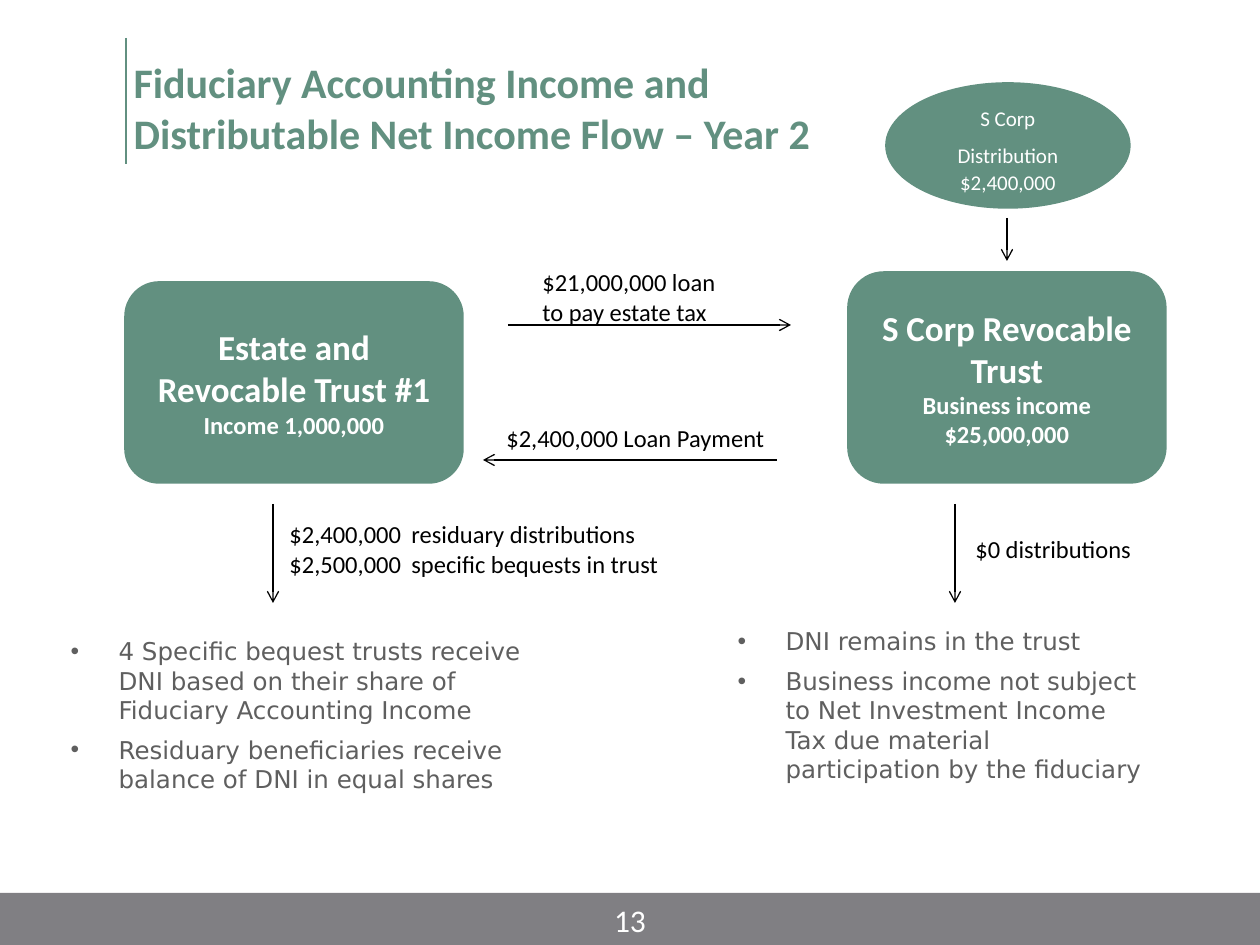
from lxml import etree
from pptx import Presentation
from pptx import util as u
from pptx.dml.color import RGBColor
from pptx.enum import shapes, text
from pptx.oxml import ns

PX = 914400 // 126
GREEN, GRAY, TEXT_GRAY = "629080", "807F83", "5F5F5F"
WHITE, BLACK = "FFFFFF", "000000"
CENTER = text.PP_ALIGN.CENTER


def px(length):
    return u.Emu(length * PX)


def color(hex_string):
    return RGBColor.from_string(hex_string)


def set_values(target, values):
    for name, value in values.items():
        setattr(target, name, value)


def place(shape, box):
    set_values(shape, dict(zip(("left", "top", "width", "height"), map(px, box))))


def add_child(parent, tag, **attributes):
    return etree.SubElement(parent, ns.qn(tag), attributes)


def write(shape, lines, ink, anchor=text.MSO_ANCHOR.TOP, **layout):
    """Each line is (words, size, bold, space before)."""
    frame = shape.text_frame
    set_values(frame, {"word_wrap": True, "vertical_anchor": anchor,
                       "auto_size": text.MSO_AUTO_SIZE.NONE})
    for index, (words, size, bold, before) in enumerate(lines):
        paragraph = frame.paragraphs[0] if index == 0 else frame.add_paragraph()
        set_values(paragraph, {"space_before": u.Pt(before), **layout})
        run = paragraph.add_run()
        run.text = words
        set_values(run.font, {"size": u.Pt(size), "bold": bold, "name": "Calibri"})
        run.font.color.rgb = color(ink)
    return frame


def add_node(slide, preset, box, lines):
    shape = slide.shapes.add_shape(preset, *map(px, box))
    shape.shadow.inherit = False
    shape.fill.solid()
    shape.fill.fore_color.rgb = color(GREEN)
    shape.line.color.rgb = color(GREEN)
    shape.line.width = u.Pt(2)
    return write(shape, lines, WHITE, text.MSO_ANCHOR.MIDDLE, alignment=CENTER)


def add_label(slide, box, lines, size=14, ink=BLACK, **layout):
    label = slide.shapes.add_textbox(*map(px, box))
    return write(label, [(line, size, False, 0) for line in lines], ink, **layout)


def add_line(slide, ends, ink=BLACK, width=0.75, arrow=True):
    line = slide.shapes.add_connector(shapes.MSO_CONNECTOR.STRAIGHT, *map(px, ends))
    line.line.color.rgb = color(ink)
    line.line.width = u.Pt(width)
    if arrow:
        add_child(line.line._get_or_add_ln(), "a:tailEnd", type="arrow")
    add_child(line._element.spPr, "a:effectLst")


def fill_bullets(placeholder, box, items):
    place(placeholder, box)
    lines = [(item, 14, False, 2.8 if index else 0) for index, item in enumerate(items)]
    frame = write(placeholder, lines, TEXT_GRAY, space_after=u.Pt(3))
    for paragraph in frame.paragraphs:
        properties = paragraph._p.get_or_add_pPr()
        properties.set("marL", str(px(48)))
        properties.set("indent", str(px(-48)))
        add_child(properties, "a:buFont", typeface="Arial")
        add_child(properties, "a:buChar", char="•")
        paragraph.runs[0].font.name = "DejaVu Sans"


def align_amounts(frame, position):
    for paragraph in frame.paragraphs:
        tabs = add_child(paragraph._p.get_or_add_pPr(), "a:tabLst")
        add_child(tabs, "a:tab", pos=str(px(position)), algn="l")


def main():
    presentation = Presentation()
    set_values(presentation, {"slide_width": px(1260), "slide_height": px(945)})
    slide = presentation.slides.add_slide(presentation.slide_layouts[3])
    title, left_body, right_body = slide.placeholders

    # Footer band and page number
    band = slide.shapes.add_shape(shapes.MSO_SHAPE.RECTANGLE, *map(px, (0, 893, 1260, 52)))
    band.shadow.inherit = False
    band.fill.solid()
    band.fill.fore_color.rgb = color(GRAY)
    band.line.fill.background()
    add_label(slide, (483, 895, 294, 50), ["13"], 18, WHITE, alignment=CENTER)

    # Title with its rule
    add_line(slide, (126, 38, 126, 164), GREEN, 1.5, arrow=False)
    place(title, (121, 31, 723, 183 - 31))
    heading = "Fiduciary Accounting Income and Distributable Net Income Flow – Year 2"
    write(title, [(heading, 24, True, 0)], GREEN, text.MSO_ANCHOR.MIDDLE,
          alignment=text.PP_ALIGN.LEFT)

    # Entities
    rounded = shapes.MSO_SHAPE.ROUNDED_RECTANGLE
    add_node(slide, rounded, (126, 283, 336, 199), [
        ("Estate and", 20, True, 0),
        ("Revocable Trust #1", 20, True, 0),
        ("Income 1,000,000", 14, True, 0)])
    add_node(slide, rounded, (849, 273, 316, 209), [
        ("S Corp Revocable Trust", 20, True, 0),
        ("Business income $25,000,000", 14, True, 0)])
    payer = add_node(slide, shapes.MSO_SHAPE.OVAL, (887, 84, 242, 123), [
        ("S Corp", 12, False, 0),
        ("Distribution", 12, False, 7),
        ("$2,400,000", 12, False, 1)])
    payer.margin_top = px(16)

    # Flows
    for ends in ((508, 325, 791, 325), (777, 460, 483, 460), (273, 504, 273, 603),
                 (955, 504, 955, 603), (1007, 218, 1007, 261)):
        add_line(slide, ends)
    add_label(slide, (530, 261, 210, 72), ["$21,000,000 loan to pay estate tax"])
    add_label(slide, (494, 417, 305, 43), ["$2,400,000 Loan Payment"])
    add_label(slide, (963, 528, 257, 43), ["$0 distributions"])
    payouts = add_label(slide, (277, 513, 412, 72), [
        "$2,400,000\tresiduary distributions",
        "$2,500,000\tspecific bequests in trust"])
    align_amounts(payouts, 122)

    # Outcomes
    fill_bullets(left_body, (58, 630, 494, 220), [
        "4 Specific bequest trusts receive DNI based on their share of "
        "Fiduciary Accounting Income",
        "Residuary beneficiaries receive balance of DNI in equal shares"])
    fill_bullets(right_body, (725, 620, 441, 189), [
        "DNI remains in the trust",
        "Business income not subject to Net Investment Income Tax due "
        "material participation by the fiduciary"])

    presentation.save("out.pptx")


if __name__ == "__main__":
    main()
